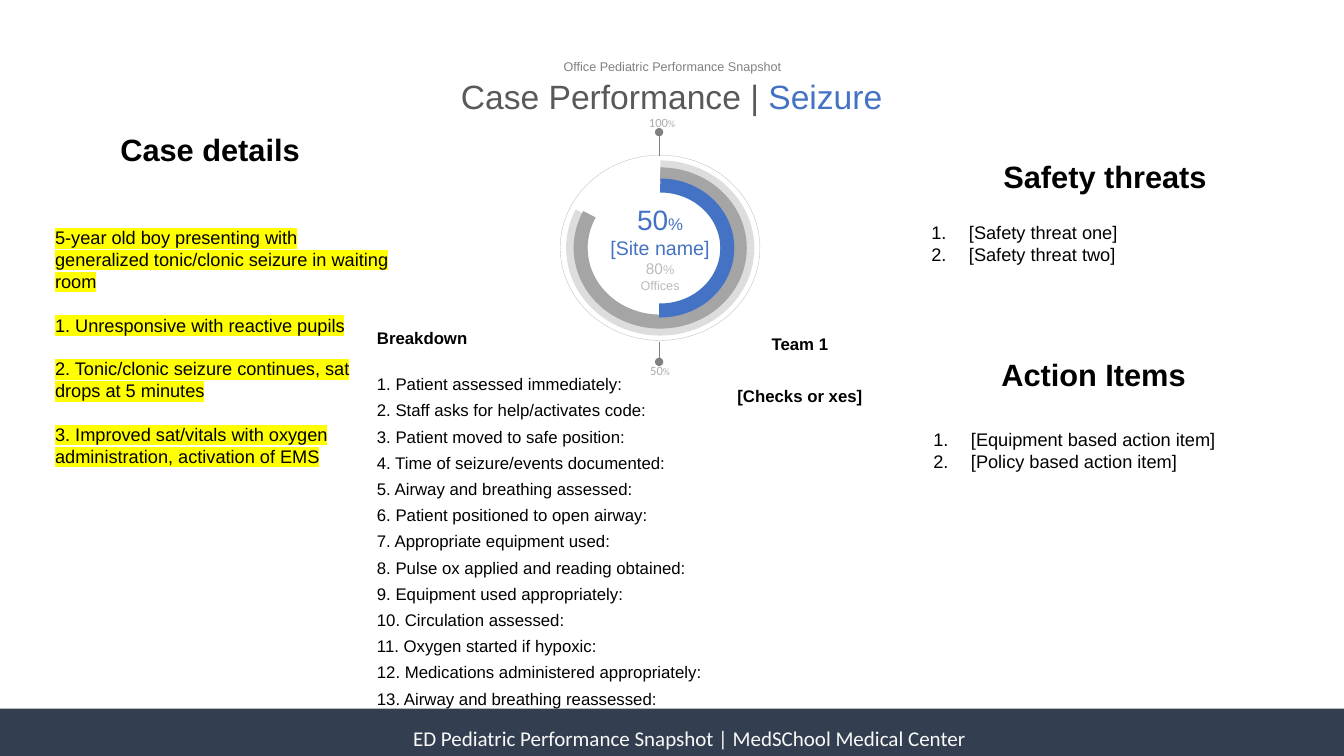
import pptx
import pptx.util
import pptx.dml.color
import pptx.enum.text
import pptx.enum.shapes
import pptx.oxml
import pptx.oxml.ns
from pptx.util import Cm, Pt
from pptx.dml.color import RGBColor
from pptx.enum.text import PP_ALIGN, MSO_ANCHOR, MSO_AUTO_SIZE
from pptx.enum.shapes import MSO_SHAPE, MSO_CONNECTOR

NAVY = RGBColor(0x33, 0x3F, 0x50)
OFF_WHITE = RGBColor(0xF9, 0xF9, 0xF9)
BLACK = RGBColor(0, 0, 0)
BLUE = RGBColor(0x44, 0x72, 0xC4)
CHARCOAL = RGBColor(0x59, 0x59, 0x59)
GREY = RGBColor(0x80, 0x80, 0x80)
OUTLINE_GREY = RGBColor(0xBF, 0xBF, 0xBF)
OFFICES_GREY = RGBColor(0xBB, 0xBB, 0xBB)
TRACK_GREY = RGBColor(0xDD, 0xDD, 0xDD)
RING_GREY = RGBColor(0xA5, 0xA5, 0xA5)
SCALE_GREY = RGBColor(0xAF, 0xAB, 0xAB)
YELLOW = RGBColor(0xFF, 0xFF, 0x00)

FOOTER = "ED Pediatric Performance Snapshot | MedSChool Medical Center"
TITLE = [("Case Performance | ", 24, CHARCOAL), ("Seizure", 24, BLUE)]
SUBTITLE = [("Office Pediatric Performance Snapshot", 9, GREY)]
SCORES = [
    [("50", 20, BLUE), ("%", 12, BLUE)],
    [("[Site name]", 14, BLUE)],
    [("80", 11, OFFICES_GREY), ("%", 9, OFFICES_GREY)],
    [("Offices", 9, OFFICES_GREY)],
]
DIAL = (14.12, 3.91, 5.03, 4.67)
RING_CENTER = (16.64, 6.25)
RINGS = [
    (4.39, 4.06, 122.57, TRACK_GREY),
    (4.01, 3.71, 123.3, RING_GREY),
    (3.38, 3.15, 54.54, BLUE),
]
TICK_X = 16.61
TICKS = [(3.94, 3.33), (8.61, 9.12)]
SCALE_LABELS = [("50", 15.9, 8.99), ("100", 15.95, 2.72)]
HEADINGS = [
    ("Case details", (2.74, 3.18, 5.11, 1.19)),
    ("Action Items", (24.64, 8.84, 5.84, 1.19)),
    ("Safety threats", (24.99, 3.86, 5.72, 1.19)),
]
CASE_INTRO = "5-year old boy presenting with generalized tonic/clonic seizure in waiting room"
CASE_STEPS = [
    " Unresponsive with reactive pupils",
    " Tonic/clonic seizure continues, sat drops at 5 minutes",
    " Improved sat/vitals with oxygen administration, activation of EMS",
]
LISTS = [
    (["[Equipment based action item]", "[Policy based action item]"], (23.27, 10.67, 9.98, 1.37)),
    (["[Safety threat one]", "[Safety threat two]"], (23.22, 5.46, 10.03, 1.37)),
]
BREAKDOWN = [
    " Patient assessed immediately:",
    " Staff asks for help/activates code:",
    " Patient moved to safe position:",
    " Time of seizure/events documented:",
    " Airway and breathing assessed:",
    " Patient positioned to open airway:",
    " Appropriate equipment used:",
    " Pulse ox applied and reading obtained:",
    " Equipment used appropriately:",
    " Circulation assessed:",
    " Oxygen started if hypoxic:",
    " Medications administered appropriately:",
    " Airway and breathing reassessed:",
]
TEAM = ["Team 1", "[Checks or xes]"]

CENTER = {"alignment": PP_ALIGN.CENTER}
GROW = {"auto_size": MSO_AUTO_SIZE.SHAPE_TO_FIT_TEXT, "word_wrap": True}
ONE_LINE = {**GROW, "word_wrap": False}
MIDDLE = {"vertical_anchor": MSO_ANCHOR.MIDDLE, "word_wrap": True}
NO_MARGINS = dict.fromkeys(["margin_left", "margin_top", "margin_right", "margin_bottom"], 0)


def apply(target, formats):
    for name, value in formats.items():
        setattr(target, name, value)


def box(values):
    return [Cm(v) for v in values]


def child(parent, tag, **attributes):
    element = pptx.oxml.ns.qn(tag)
    node = parent.makeelement(element, attributes)
    parent.append(node)
    return node


def write(tf, paragraphs, frame, font="Arial"):
    apply(tf, frame)
    for i, (runs, formats) in enumerate(paragraphs):
        p = tf.paragraphs[0] if i == 0 else tf.add_paragraph()
        apply(p, formats)
        for text, size, color, *bold in runs:
            r = p.add_run()
            r.text = text
            apply(r.font, {"size": Pt(size), "name": font, "bold": bool(bold)})
            r.font.color.rgb = color
    return tf.paragraphs


def add_text(s, position, paragraphs, frame, font="Arial"):
    return write(s.shapes.add_textbox(*box(position)).text_frame, paragraphs, frame, font)


def number(p, hanging=0):
    pPr = p._p.get_or_add_pPr()
    if hanging:
        pPr.set("marL", str(Cm(hanging)))
        pPr.set("indent", str(-Cm(hanging)))
    child(pPr, "a:buFont", typeface="+mj-lt")
    child(pPr, "a:buAutoNum", type="arabicPeriod")


def highlight(r, color):
    rPr = r.font._element
    mark = child(rPr, "a:highlight")
    child(mark, "a:srgbClr", val=str(color))
    rPr.find(pptx.oxml.ns.qn("a:solidFill")).addnext(mark)


def add_shape(s, kind, position, fill=None, line=None, width=0):
    sp = s.shapes.add_shape(kind, *box(position))
    sp.shadow.inherit = False
    if fill:
        sp.fill.solid()
        sp.fill.fore_color.rgb = fill
    else:
        sp.fill.background()
    if line:
        sp.line.color.rgb = line
        sp.line.width = Pt(width)
    else:
        sp.line.fill.background()
    return sp


def add_frame(s):
    add_shape(s, MSO_SHAPE.RECTANGLE, (0, 17.86, 33.87, 1.19), fill=NAVY)
    add_text(s, (10.16, 18.16, 16.08, 0.89), [([(FOOTER, 15, OFF_WHITE)], {})], ONE_LINE, "Calibri")
    title = s.shapes.title
    apply(title, dict(zip(("left", "top", "width", "height"), box((11.3, 1.78, 11.25, 1.27)))))
    write(title.text_frame, [(TITLE, CENTER)], {**ONE_LINE, "vertical_anchor": MSO_ANCHOR.TOP})
    add_text(s, (13.92, 1.35, 6.05, 0.64), [(SUBTITLE, CENTER)], ONE_LINE)


def add_dial(s):
    dial = add_shape(s, MSO_SHAPE.OVAL, DIAL, line=OUTLINE_GREY, width=0.25)
    write(dial.text_frame, [(runs, CENTER) for runs in SCORES], MIDDLE)
    cx, cy = RING_CENTER
    for w, h, end, color in RINGS:
        ring = add_shape(s, MSO_SHAPE.ARC, (cx - w / 2, cy - h / 2, w, h), line=color, width=10)
        ring.adjustments[0] = 162
        ring.adjustments[1] = end
    for start, end in TICKS:
        tick = s.shapes.add_connector(MSO_CONNECTOR.STRAIGHT, *box((TICK_X, start, TICK_X, end)))
        tick.line.color.rgb = GREY
        tick.line.width = Pt(0.5)
        child(tick.line._get_or_add_ln(), "a:tailEnd", type="oval")
        child(tick._element.spPr, "a:effectLst")
    for value, left, top in SCALE_LABELS:
        runs = [(value, 9, SCALE_GREY), ("%", 7, SCALE_GREY)]
        add_text(s, (left, top, 1.47, 0.71), [(runs, CENTER)], {**MIDDLE, **NO_MARGINS}, "Calibri")


def add_columns(s):
    for text, position in HEADINGS:
        add_text(s, position, [([(text, 22, BLACK, True)], CENTER)], ONE_LINE)
    paragraphs = [([(text, 13, BLACK)], {"space_before": Pt(15.6 if i else 0)})
                  for i, text in enumerate([CASE_INTRO] + CASE_STEPS)]
    case = add_text(s, (1.14, 5.58, 8.99, 6.38), paragraphs, GROW)
    for p in case:
        highlight(p.runs[0], YELLOW)
    for p in case[1:]:
        number(p)
    for items, position in LISTS:
        for p in add_text(s, position, [([(text, 13, BLACK)], {}) for text in items], GROW):
            number(p, 0.95)


def add_breakdown(s):
    paragraphs = [([("Breakdown", 12, BLACK, True)], {"space_after": Pt(14.4)})]
    paragraphs += [([(text, 12, BLACK)], {"line_spacing": 1.3}) for text in BREAKDOWN]
    for p in add_text(s, (9.25, 8.13, 16.38, 9.88), paragraphs, GROW)[1:]:
        number(p)
    paragraphs = [([(text, 12, BLACK, True)],
                   {**CENTER, "line_spacing": 1.3, "space_before": Pt(18.7 * i)})
                  for i, text in enumerate(TEAM)]
    add_text(s, (17.86, 8.13, 4.6, 2.18), paragraphs, GROW)


def main():
    prs = pptx.Presentation()
    prs.slide_width, prs.slide_height = Cm(33.87), Cm(19.05)
    s = prs.slides.add_slide(prs.slide_layouts[5])
    add_frame(s)
    add_dial(s)
    add_columns(s)
    add_breakdown(s)
    prs.save("out.pptx")


if __name__ == "__main__":
    main()
